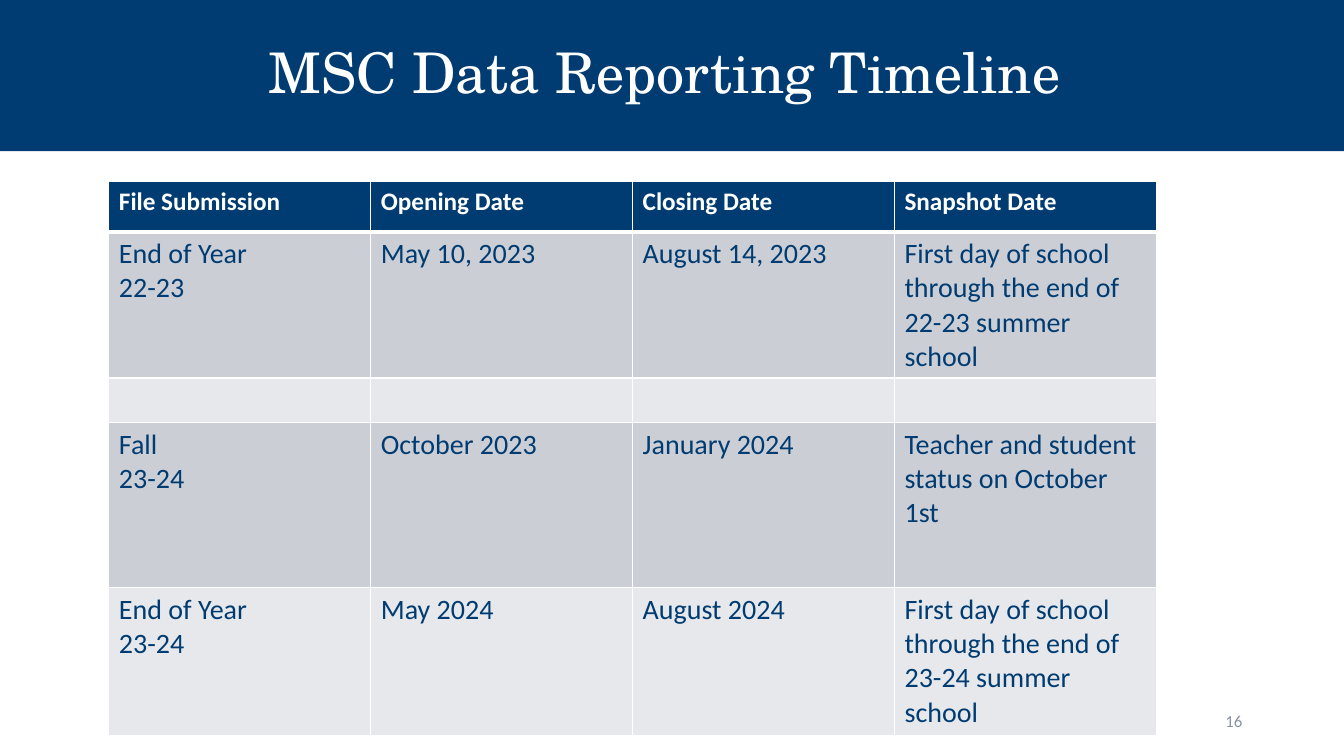
import pptx
import pptx.util
import pptx.dml.color
import pptx.enum.text
import pptx.oxml.ns
import lxml.etree

Inches = pptx.util.Inches
Pt = pptx.util.Pt
ALIGN = pptx.enum.text.PP_ALIGN
MIDDLE = pptx.enum.text.MSO_ANCHOR.MIDDLE

NAVY, WHITE, GREY = "003C71", "FFFFFF", "8C92A5"
BANDS = ["CCCED5", "E7E8EB"]
HEIGHTS = [0.5, 1.45, 0.44, 1.64, 1.47]
ROWS = [
    ["File Submission", "Opening Date", "Closing Date", "Snapshot Date"],
    ["End of Year\n22-23", "May 10, 2023", "August 14, 2023",
     "First day of school through the end of 22-23 summer school"],
    ["", "", "", ""],
    ["Fall\n23-24", "October 2023", "January 2024",
     "Teacher and student status on October 1st"],
    ["End of Year\n23-24", "May 2024", "August 2024",
     "First day of school through the end of 23-24 summer school"],
]


def color(code):
    return pptx.dml.color.RGBColor.from_string(code)


def paint(item, code):
    item.fill.solid()
    item.fill.fore_color.rgb = color(code)


def write(frame, text, size=20, font="Calibri", ink=NAVY, bold=False,
          align=ALIGN.LEFT, space=1.0):
    frame.text = text
    for para in frame.paragraphs:
        para.alignment = align
        para.line_spacing = space
        for run in para.runs:
            run.font.size = Pt(size)
            run.font.name = font
            run.font.bold = bold
            run.font.color.rgb = color(ink)


def border(cell, side, width):
    props = cell._tc.get_or_add_tcPr()
    tag = pptx.oxml.ns.qn
    line = lxml.etree.SubElement(props, tag("a:ln" + side), w=str(Pt(width)))
    fill = lxml.etree.SubElement(line, tag("a:solidFill"))
    lxml.etree.SubElement(fill, tag("a:srgbClr"), val=WHITE)


def add_title(slide, text):
    title = slide.shapes.title
    title.left, title.top = Inches(0), Inches(0)
    title.width, title.height = Inches(13.33), Inches(1.5)
    paint(title, NAVY)
    frame = title.text_frame
    frame.vertical_anchor = MIDDLE
    frame.word_wrap = True
    write(frame, text, size=40, font="TeX Gyre Schola", ink=WHITE,
          align=ALIGN.CENTER, space=0.9)


def add_grid(slide, rows):
    frame = slide.shapes.add_table(
        len(rows), len(rows[0]), Inches(1.08), Inches(1.8),
        Inches(10.39), Inches(sum(HEIGHTS)))
    table = frame.table
    for row, height in zip(table.rows, HEIGHTS):
        row.height = Inches(height)
    for r, texts in enumerate(rows):
        head = r == 0
        for c, text in enumerate(texts):
            cell = table.cell(r, c)
            for side in "LRTB":
                thick = (head and side == "B") or (r == 1 and side == "T")
                border(cell, side, 3 if thick else 1)
            paint(cell, NAVY if head else BANDS[(r - 1) % 2])
            write(cell.text_frame, text, size=18 if head else 20,
                  ink=WHITE if head else NAVY, bold=head)


def add_number(slide, text):
    box = slide.shapes.add_textbox(
        Inches(9.42), Inches(6.95), Inches(3), Inches(0.4))
    box.text_frame.word_wrap = True
    box.text_frame.vertical_anchor = MIDDLE
    write(box.text_frame, text, size=12, ink=GREY, align=ALIGN.RIGHT)


def main():
    deck = pptx.Presentation()
    deck.slide_width, deck.slide_height = Inches(13.33), Inches(7.5)
    # Title Only layout
    slide = deck.slides.add_slide(deck.slide_layouts[5])
    # Page number, banner and timeline
    add_number(slide, "16")
    add_title(slide, "MSC Data Reporting Timeline ")
    add_grid(slide, ROWS)
    deck.save("out.pptx")


if __name__ == "__main__":
    main()
